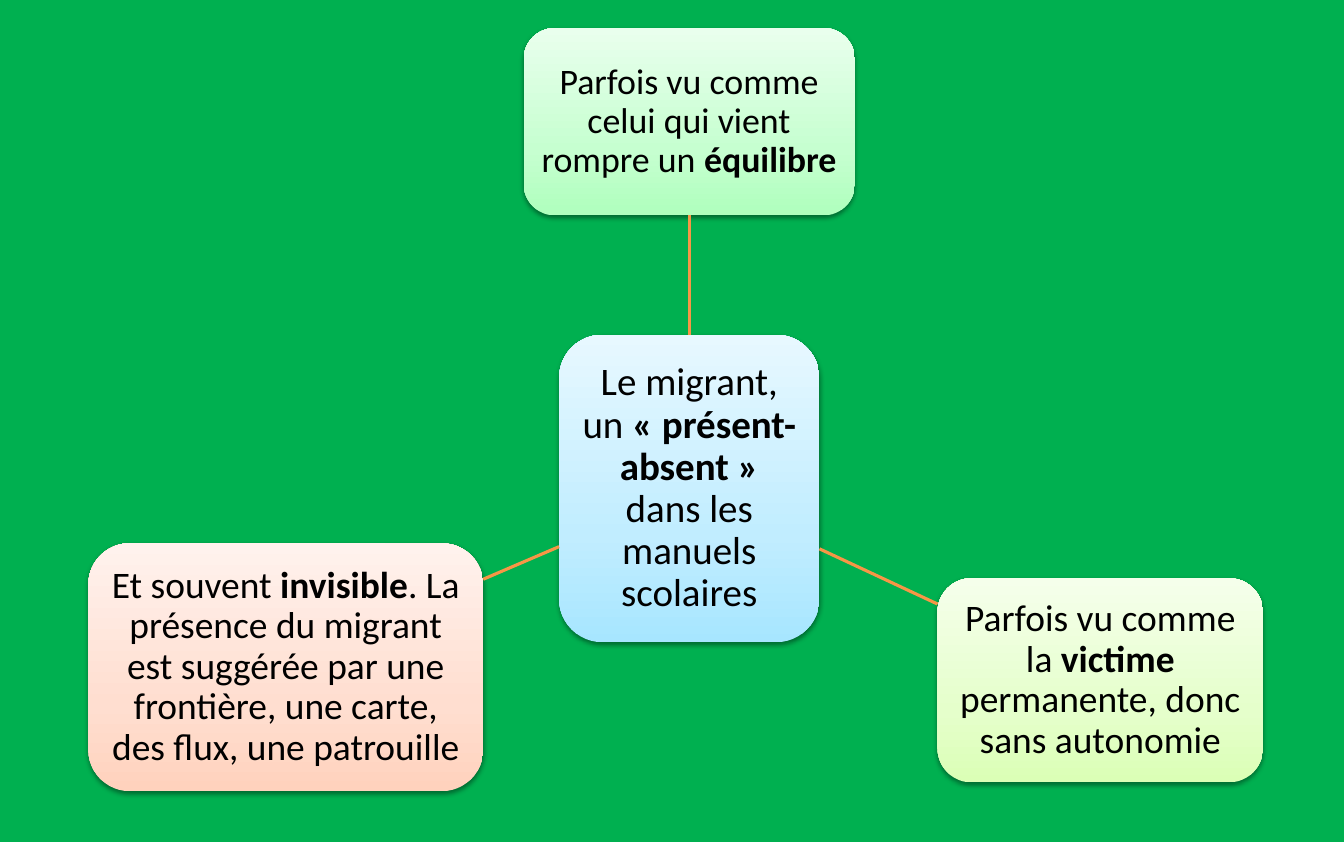
"""Build a slide with a central idea linked to three views of the migrant."""
from copy import deepcopy

from pptx import Presentation
from pptx.dml.color import RGBColor
from pptx.enum.shapes import MSO_CONNECTOR, MSO_SHAPE
from pptx.enum.text import MSO_ANCHOR, PP_ALIGN
from pptx.oxml import parse_xml
from pptx.oxml.ns import nsdecls, qn
from pptx.util import Pt

ROUND = MSO_SHAPE.ROUNDED_RECTANGLE
STRAIGHT = MSO_CONNECTOR.STRAIGHT
MIDDLE = MSO_ANCHOR.MIDDLE
CENTER = PP_ALIGN.CENTER

STOPS = (0, 0.35, 1)
BLUE = ("A7E6FF", "C1EDFF", "E7F8FF")
GREEN = ("AFFFBD", "C6FFD0", "E9FFED")
LIME = ("DBFFB6", "E5FFCB", "F5FFEB")
PEACH = ("FFD2BD", "FFDED0", "FFF2ED")
SHADOW = (
    f'<a:outerShdw {nsdecls("a")} blurRad="{Pt(3.1)}" dist="{Pt(1.6)}" '
    'dir="5400000" rotWithShape="0"><a:srgbClr val="000000">'
    '<a:alpha val="38000"/></a:srgbClr></a:outerShdw>'
)


def paint(color, value):
    color.rgb = RGBColor.from_string(value)


def shade(shape, colors):
    fill = shape.fill
    fill.gradient()
    fill.gradient_angle = 90
    stops = shape.element.spPr.find(".//" + qn("a:gsLst"))
    stops.append(deepcopy(stops[0]))
    for stop, place, value in zip(fill.gradient_stops, STOPS, colors):
        stop.position = place
        paint(stop.color, value)


def write(shape, parts, size, inset):
    frame = shape.text_frame
    frame.word_wrap = True
    frame.vertical_anchor = MIDDLE
    frame.margin_left = frame.margin_right = Pt(inset)
    frame.margin_top = frame.margin_bottom = Pt(inset)
    para = frame.paragraphs[0]
    para.alignment = CENTER
    para.line_spacing = 0.9
    for text, bold in parts:
        run = para.add_run()
        run.text = text
        run.font.name = "Calibri"
        run.font.size = Pt(size)
        run.font.bold = bold
        paint(run.font.color, "000000")


def add_node(slide, box, colors, size, parts, inset=5):
    node = slide.shapes.add_shape(ROUND, *map(Pt, box))
    shade(node, colors)
    node.line.fill.background()
    node.shadow.inherit = False
    node.element.spPr.find(qn("a:effectLst")).append(parse_xml(SHADOW))
    write(node, parts, size, inset)
    return node


def add_link(slide, ends):
    link = slide.shapes.add_connector(STRAIGHT, *map(Pt, ends))
    link.line.width = Pt(2)
    paint(link.line.color, "F79646")
    link.element.spPr.append(parse_xml(f'<a:effectLst {nsdecls("a")}/>'))
    return link


def main():
    deck = Presentation()
    deck.slide_width, deck.slide_height = Pt(861.84), Pt(540)
    slide = deck.slides.add_slide(deck.slide_layouts[6])
    back = slide.background.fill
    back.solid()
    paint(back.fore_color, "00B050")

    hub = add_node(slide, (358.5, 214.7, 167, 197.2), BLUE, 25, [
        ("Le migrant, un ", False),
        ("« présent-absent » ", True),
        ("dans les manuels scolaires", False),
    ])
    top = add_node(slide, (335.8, 18, 212.4, 120.2), GREEN, 23, [
        ("Parfois vu comme celui qui vient rompre un ", False),
        ("équilibre", True),
    ], 4.5)
    add_node(slide, (601.2, 370.8, 208.8, 131), LIME, 24, [
        ("Parfois vu comme la ", False),
        ("victime", True),
        (" permanente, donc sans autonomie", False),
    ])
    add_node(slide, (56.7, 348.4, 253.2, 159), PEACH, 24, [
        ("Et souvent ", False),
        ("invisible", True),
        (". La présence du migrant est suggérée par une frontière, "
         "une carte, des flux, une patrouille", False),
    ])

    stem = add_link(slide, (442, 214.7, 442, 138.2))
    stem.begin_connect(hub, 0)
    stem.end_connect(top, 2)
    add_link(slide, (525.5, 352, 601.2, 387.4))
    add_link(slide, (358.5, 350.6, 309.9, 371.5))

    deck.save("out.pptx")


if __name__ == "__main__":
    main()
